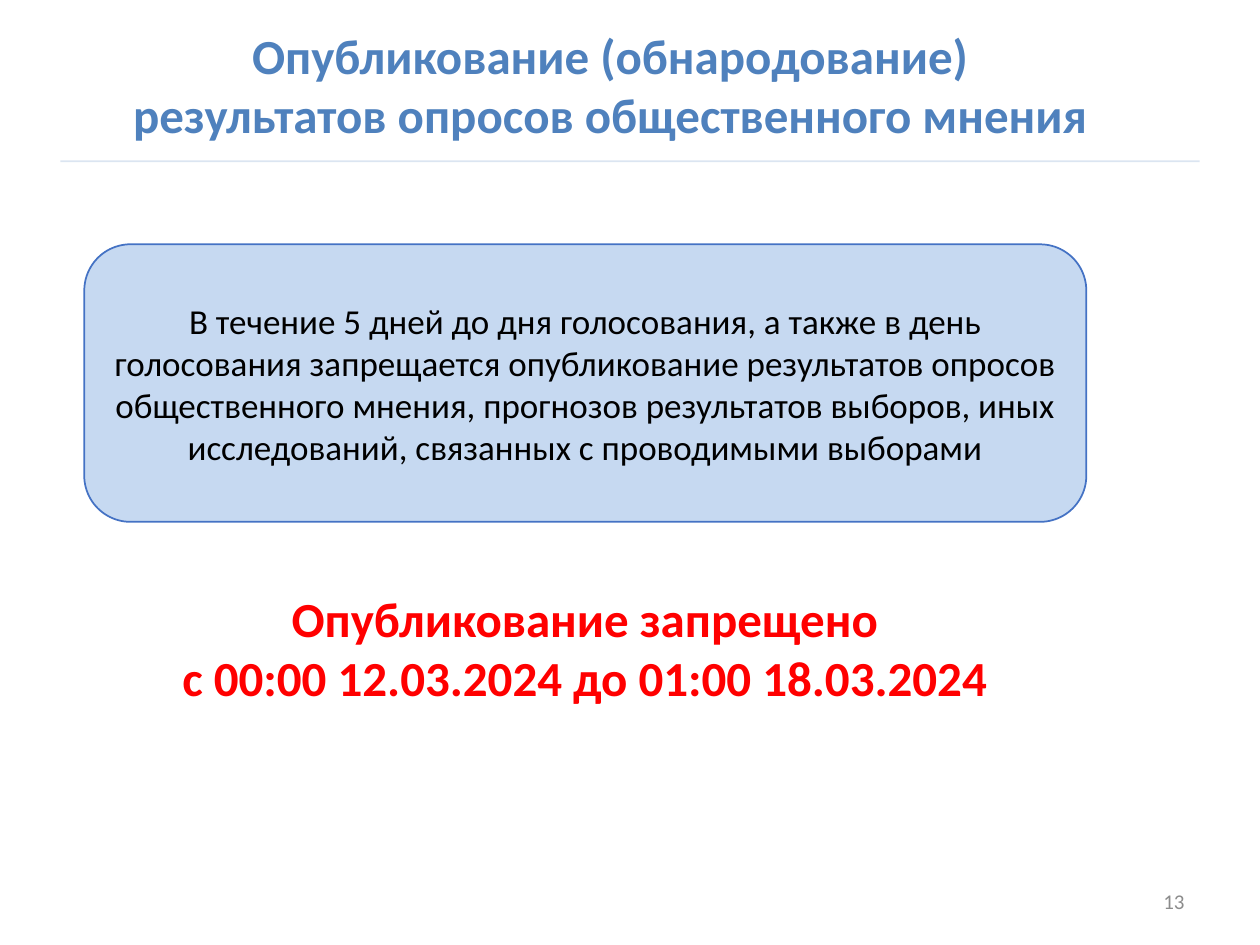
from dataclasses import dataclass

from lxml import etree
from pptx import Presentation
from pptx.dml.color import RGBColor
from pptx.enum.shapes import MSO_CONNECTOR, MSO_SHAPE
from pptx.enum.text import MSO_ANCHOR, PP_ALIGN
from pptx.oxml.ns import qn
from pptx.util import Pt

STRAIGHT = MSO_CONNECTOR.STRAIGHT
RECTANGLE, ROUNDED = MSO_SHAPE.RECTANGLE, MSO_SHAPE.ROUNDED_RECTANGLE
TOP, MIDDLE = MSO_ANCHOR.TOP, MSO_ANCHOR.MIDDLE
CENTER, RIGHT = PP_ALIGN.CENTER, PP_ALIGN.RIGHT


@dataclass(frozen=True)
class Theme:
    font: str = "Calibri"
    accent: str = "4F81BD"
    warning: str = "FF0000"
    text: str = "000000"
    muted: str = "8C8C8C"
    background: str = "FFFFFF"
    panel: str = "C6D9F1"
    outline: str = "4472C4"
    heading_size: int = 28
    body_size: int = 20
    number_size: int = 12


class SlideBuilder:
    """Draw styled elements on one slide, with lengths in points."""

    def __init__(self, slide, theme):
        self.slide = slide
        self.theme = theme

    def fill_text(self, shape, lines, size, color, bold=False, align=CENTER, anchor=MIDDLE):
        frame = shape.text_frame
        frame.word_wrap = True
        frame.vertical_anchor = anchor
        formats = {"name": self.theme.font, "size": Pt(size), "bold": bold}
        for index, line in enumerate(lines):
            paragraph = frame.add_paragraph() if index else frame.paragraphs[0]
            paragraph.text = line
            paragraph.alignment = align
            for name, value in formats.items():
                setattr(paragraph.font, name, value)
            paragraph.font.color.rgb = RGBColor.from_string(color)

    def text(self, bounds, lines, size, color, **formats):
        shape = self.slide.shapes.add_textbox(*map(Pt, bounds))
        self.fill_text(shape, lines, size, color, **formats)

    def box(self, kind, bounds, fill, lines, size, color, outline=None, **formats):
        shape = self.slide.shapes.add_shape(kind, *map(Pt, bounds))
        shape.shadow.inherit = False
        shape.fill.solid()
        shape.fill.fore_color.rgb = RGBColor.from_string(fill)
        if outline:
            shape.line.color.rgb = RGBColor.from_string(outline)
            shape.line.width = Pt(1)
        else:
            shape.line.fill.background()
        self.fill_text(shape, lines, size, color, **formats)

    def rule(self, left, right, top, color, opacity):
        ends = map(Pt, (left, top, right, top))
        connector = self.slide.shapes.add_connector(STRAIGHT, *ends)
        connector.line.color.rgb = RGBColor.from_string(color)
        connector.line.width = Pt(1)
        properties = connector._element.spPr
        tint = next(properties.iter(qn("a:srgbClr")))
        etree.SubElement(tint, qn("a:alpha")).set("val", str(opacity * 1000))
        etree.SubElement(properties, qn("a:effectLst"))


def main():
    theme = Theme()
    presentation = Presentation()
    presentation.slide_width, presentation.slide_height = Pt(720), Pt(540)
    slide = presentation.slides.add_slide(presentation.slide_layouts[6])
    builder = SlideBuilder(slide, theme)

    builder.rule(34.5, 685.5, 92.2, theme.accent, opacity=20)
    builder.text(
        (65.5, 20.9, 566, 54.7),
        ["Опубликование (обнародование) результатов опросов общественного мнения"],
        theme.heading_size, theme.accent, bold=True,
    )
    builder.text(
        (516.2, 500.4, 167.8, 28.8), ["13"],
        theme.number_size, theme.muted, align=RIGHT,
    )
    builder.box(
        RECTANGLE, (74.9, 332.6, 518.4, 75), theme.background,
        ["Опубликование запрещено", "с 00:00 12.03.2024 до 01:00 18.03.2024"],
        theme.heading_size, theme.warning, bold=True, anchor=TOP,
    )
    builder.box(
        ROUNDED, (48.2, 139.6, 572.6, 158.6), theme.panel,
        ["В течение 5 дней до дня голосования, а также в день голосования "
         "запрещается опубликование результатов опросов общественного мнения, "
         "прогнозов результатов выборов, иных исследований, связанных с "
         "проводимыми выборами"],
        theme.body_size, theme.text, outline=theme.outline,
    )
    presentation.save("out.pptx")


if __name__ == "__main__":
    main()
